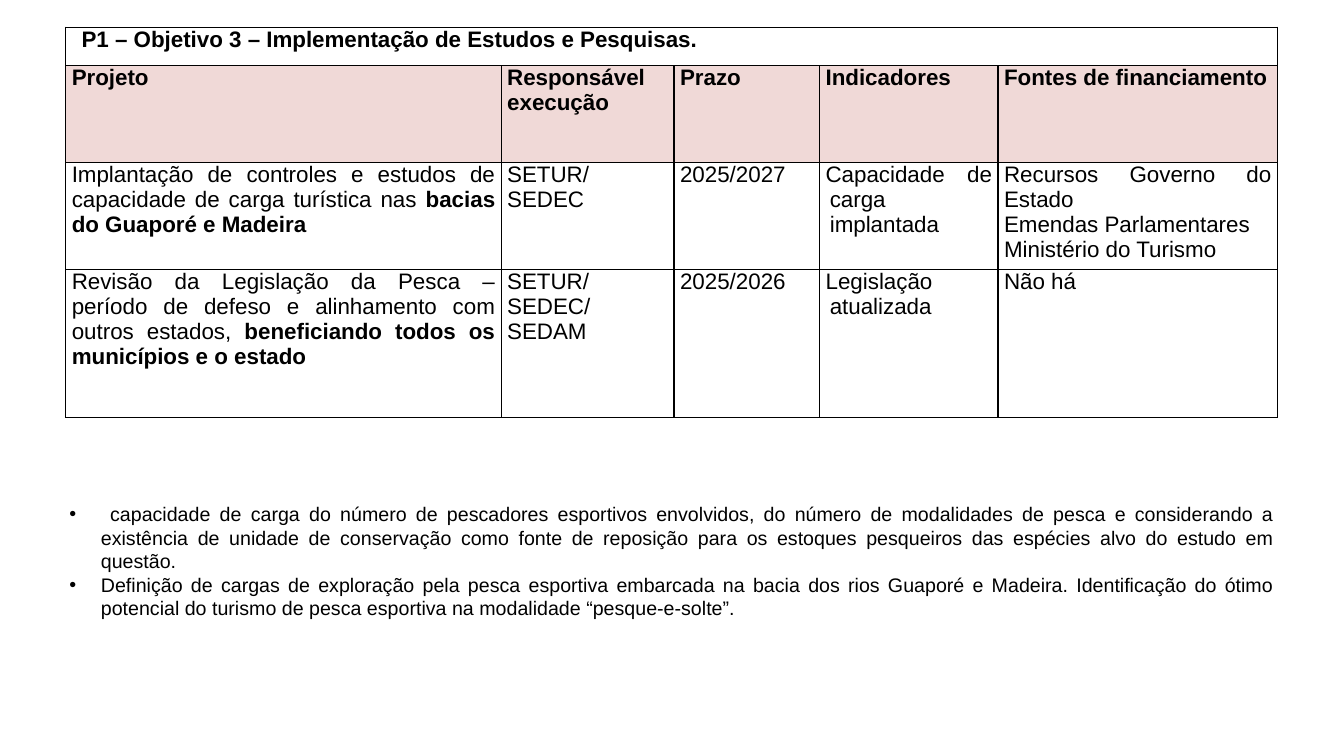
"""Build the slide on objective 3, studies and research."""
from lxml import etree
from pptx import Presentation
from pptx.dml.color import RGBColor
from pptx.enum.text import MSO_AUTO_SIZE, PP_ALIGN
from pptx.oxml.ns import qn
from pptx.util import Pt

JUSTIFY = PP_ALIGN.JUSTIFY
GROW = MSO_AUTO_SIZE.SHAPE_TO_FIT_TEXT

TITLE = "P1 – Objetivo 3 – Implementação de Estudos e Pesquisas."
HEADERS = ["Projeto", "Responsável execução", "Prazo", "Indicadores",
           "Fontes de financiamento"]
PROJECTS = [
    {"project": ("Implantação de controles e estudos de capacidade de carga turística nas ",
                 "bacias do Guaporé e Madeira"),
     "owner": ["SETUR/", "SEDEC"],
     "term": "2025/2027",
     "indicator": "Capacidade de carga implantada",
     "funding": ["Recursos Governo do Estado", "Emendas Parlamentares",
                 "Ministério do Turismo"]},
    {"project": ("Revisão da Legislação da Pesca – período de defeso e alinhamento com "
                 "outros estados, ",
                 "beneficiando todos os municípios e o estado"),
     "owner": ["SETUR/SEDEC/ SEDAM"],
     "term": "2025/2026",
     "indicator": "Legislação atualizada",
     "funding": ["Não há"]},
]
NOTES = [
    " capacidade de carga do número de pescadores esportivos envolvidos, do número de "
    "modalidades de pesca e considerando a existência de unidade de conservação como fonte "
    "de reposição para os estoques pesqueiros das espécies alvo do estudo em questão. ",
    "Definição de cargas de exploração pela pesca esportiva embarcada na bacia dos rios "
    "Guaporé e Madeira. Identificação do ótimo potencial do turismo de pesca esportiva na "
    "modalidade “pesque-e-solte”. ",
]

THEME = {"font": "Arial", "table_size": 16, "note_size": 14,
         "text": "000000", "border": "000000", "header": "F0D9D7"}
SLIDE = (960, 540)
TABLE_AT = (47, 19.5)
COLS = [311, 123.5, 104, 127.5, 199.5]
ROWS = [27.5, 69, 76.5, 106]
NOTES_BOX = (42.5, 355, 875, 75)
CELL_INSET = 4.3
TITLE_INDENT = 7
HANGING = 3
NOTE_HANGING = 22.5


def add_paragraph(tf, first, runs, size, margin=0, indent=0):
    """Add a justified paragraph made of (text, bold) runs."""
    p = tf.paragraphs[0] if first else tf.add_paragraph()
    p.alignment = JUSTIFY
    ppr = p._p.get_or_add_pPr()
    ppr.set("marL", str(Pt(margin)))
    ppr.set("indent", str(Pt(indent)))
    for text, bold in runs:
        r = p.add_run()
        r.text = text
        r.font.name = THEME["font"]
        r.font.size = Pt(size)
        r.font.bold = bold
        r.font.color.rgb = RGBColor.from_string(THEME["text"])
    return p


def set_borders(cell):
    """Draw a thin line on the four sides of a cell."""
    tcpr = cell._tc.get_or_add_tcPr()
    for i, side in enumerate(("a:lnL", "a:lnR", "a:lnT", "a:lnB")):
        ln = etree.Element(qn(side), w=str(Pt(1)))
        fill = etree.SubElement(ln, qn("a:solidFill"))
        etree.SubElement(fill, qn("a:srgbClr"), val=THEME["border"])
        tcpr.insert(i, ln)


def fill_cell(cell, paragraphs, margin=0, indent=0):
    """Write the paragraphs into a cell."""
    for i, runs in enumerate(paragraphs):
        add_paragraph(cell.text_frame, i == 0, runs, THEME["table_size"], margin, indent)


def add_project_table(s):
    """Add the table of projects."""
    size = (sum(COLS), sum(ROWS))
    frame = s.shapes.add_table(len(ROWS), len(COLS), *map(Pt, TABLE_AT + size))
    table = frame.table
    for col, width in zip(table.columns, COLS):
        col.width = Pt(width)
    for row, height in zip(table.rows, ROWS):
        row.height = Pt(height)
    for i, row in enumerate(table.rows):
        for cell in row.cells:
            cell.margin_left = cell.margin_right = Pt(CELL_INSET)
            cell.margin_top = cell.margin_bottom = 0
            if i == 1:
                cell.fill.solid()
                cell.fill.fore_color.rgb = RGBColor.from_string(THEME["header"])
            else:
                cell.fill.background()
            set_borders(cell)
    table.cell(0, 0).merge(table.cell(0, len(COLS) - 1))
    fill_cell(table.cell(0, 0), [[(TITLE, True)]], TITLE_INDENT)
    for c, header in enumerate(HEADERS):
        fill_cell(table.cell(1, c), [[(header, True)]])
    for i, item in enumerate(PROJECTS, start=2):
        plain, strong = item["project"]
        fill_cell(table.cell(i, 0), [[(plain, False), (strong, True)]])
        fill_cell(table.cell(i, 1), [[(line, False)] for line in item["owner"]])
        fill_cell(table.cell(i, 2), [[(item["term"], False)]])
        fill_cell(table.cell(i, 3), [[(item["indicator"], False)]], HANGING, -HANGING)
        fill_cell(table.cell(i, 4), [[(line, False)] for line in item["funding"]])


def add_notes(s):
    """Add the bulleted remarks below the table."""
    tf = s.shapes.add_textbox(*map(Pt, NOTES_BOX)).text_frame
    tf.word_wrap = True
    tf.auto_size = GROW
    for i, note in enumerate(NOTES):
        p = add_paragraph(tf, i == 0, [(note, False)], THEME["note_size"],
                          NOTE_HANGING, -NOTE_HANGING)
        ppr = p._p.get_or_add_pPr()
        etree.SubElement(ppr, qn("a:buFont"), typeface=THEME["font"])
        etree.SubElement(ppr, qn("a:buChar"), char="•")


def main():
    """Build and save the slide."""
    prs = Presentation()
    prs.slide_width, prs.slide_height = map(Pt, SLIDE)
    s = prs.slides.add_slide(prs.slide_layouts[6])
    add_project_table(s)
    add_notes(s)
    prs.save("out.pptx")


if __name__ == "__main__":
    main()
